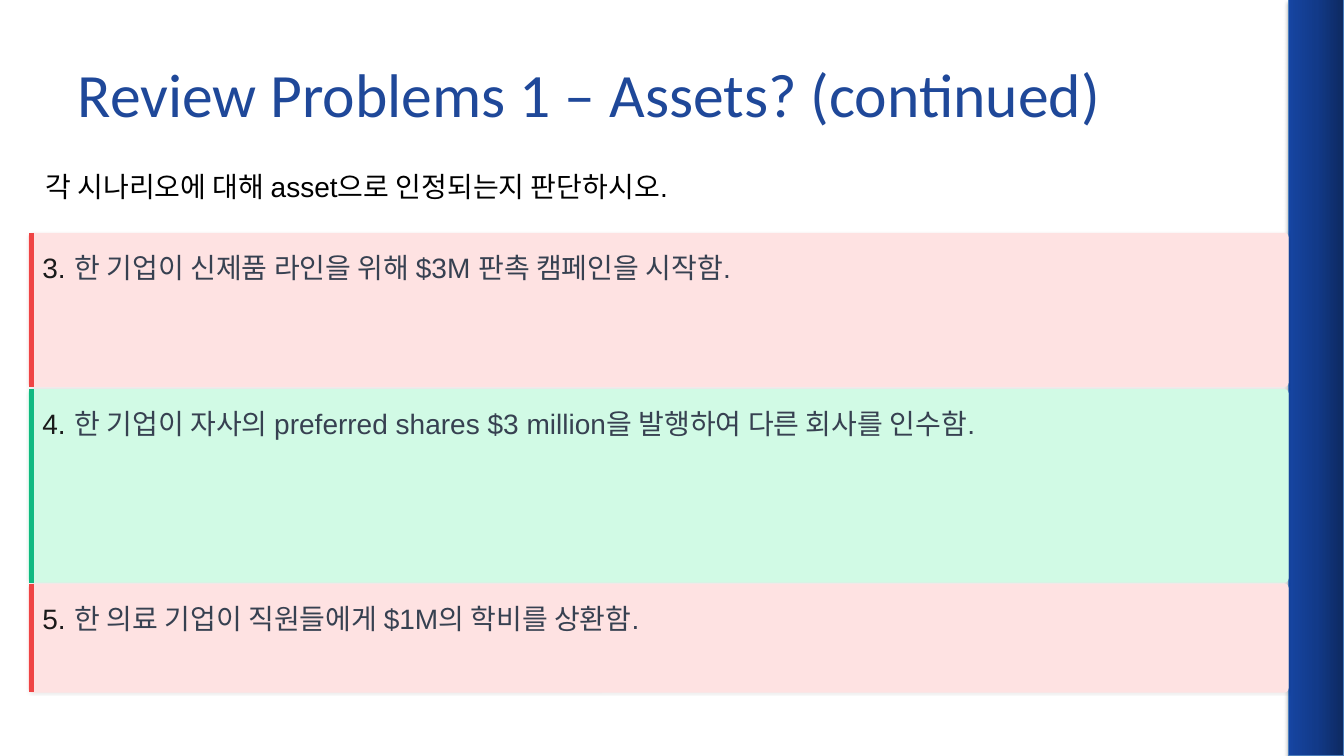
import pptx
import pptx.dml.color
import pptx.enum.shapes
import pptx.enum.text
import pptx.oxml
import pptx.oxml.ns
import pptx.util

# Content
TITLE = "Review Problems 1 – Assets? (continued)"
LEAD = "각 시나리오에 대해 asset으로 인정되는지 판단하시오."
RED = ("FEE2E2", "EF4444")
GREEN = ("D1FAE5", "10B981")
# number, text, (fill, edge), top, height
CARDS = [
    ("3.", "한 기업이 신제품 라인을 위해 $3M 판촉 캠페인을 시작함.", RED, 2.31, 1.53),
    ("4.", "한 기업이 자사의 preferred shares $3 million을 발행하여 다른 회사를 인수함.",
     GREEN, 3.86, 1.92),
    ("5.", "한 의료 기업이 직원들에게 $1M의 학비를 상환함.", RED, 5.79, 1.08),
]
RAIL = [(0, "0D2960"), (50, "123A89"), (100, "1645A2")]
LEFT, WIDTH, RADIUS = 0.28, 12.5, 0.04

Inches = pptx.util.Inches
Pt = pptx.util.Pt
KIND = pptx.enum.shapes.MSO_SHAPE
NS = pptx.oxml.ns.nsdecls("a")


def color(code):
    return pptx.dml.color.RGBColor.from_string(code)


def style(frame, text, size=20, font="Arial", tint="374151", lead=None):
    frame.word_wrap = True
    para = frame.paragraphs[0]
    para.alignment = pptx.enum.text.PP_ALIGN.LEFT
    if lead:
        para.line_spacing = Pt(lead)
        para.space_after = Pt(4)
    run = para.add_run()
    run.text = text
    run.font.size = Pt(size)
    run.font.name = font
    run.font.color.rgb = color(tint)


def label(text, x, y, w, **form):
    box = slide.shapes.add_textbox(Inches(x), Inches(y), Inches(w), Inches(0.39))
    frame = box.text_frame
    frame.margin_left = frame.margin_right = 0
    frame.margin_top = frame.margin_bottom = 0
    style(frame, text, lead=28, **form)


def block(kind, x, y, w, h):
    shape = slide.shapes.add_shape(kind, Inches(x), Inches(y), Inches(w), Inches(h))
    shape.shadow.inherit = False
    return shape


def shade(shape, alpha, blur, dist):
    glow = pptx.oxml.parse_xml(
        f'<a:outerShdw {NS} blurRad="{Pt(blur)}" dist="{Pt(dist)}" dir="5400000" '
        f'algn="t" rotWithShape="0"><a:srgbClr val="000000">'
        f'<a:alpha val="{alpha * 1000}"/></a:srgbClr></a:outerShdw>')
    shape.element.spPr.find(pptx.oxml.ns.qn("a:effectLst")).append(glow)


deck = pptx.Presentation()
deck.slide_width, deck.slide_height = Inches(13.33), Inches(7.5)
slide = deck.slides.add_slide(deck.slide_layouts[5])

# Right rail
rail = block(KIND.RECTANGLE, 12.78, 0, 0.55, 7.5)
rail.fill.gradient()
rail.fill.gradient_angle = 180
stops = rail.element.spPr.find(".//" + pptx.oxml.ns.qn("a:gsLst"))
for stop in list(stops):
    stops.remove(stop)
for place, code in RAIL:
    stops.append(pptx.oxml.parse_xml(
        f'<a:gs {NS} pos="{place * 1000}"><a:srgbClr val="{code}"/></a:gs>'))
rail.line.color.rgb = color("4B7EBC")
rail.line.width = Pt(0.75)
shade(rail, 35, 3.1, 1.8)

# Title and lead
title = slide.shapes.title
title.left, title.top = Inches(0.67), Inches(0.3)
title.width, title.height = Inches(12), Inches(1.25)
title.text_frame.vertical_anchor = pptx.enum.text.MSO_ANCHOR.MIDDLE
style(title.text_frame, TITLE, size=44, font="Calibri", tint="1F4899")
label(LEAD, 0.45, 1.63, 10.2, tint="000000")

# Scenario cards
for number, text, (fill, edge), top, high in CARDS:
    card = block(KIND.ROUNDED_RECTANGLE, LEFT, top, WIDTH, high)
    card.adjustments[0] = RADIUS / high
    card.fill.solid()
    card.fill.fore_color.rgb = color(fill)
    card.line.fill.background()
    shade(card, 8, 1.5, 0.8)

    x = Inches(LEFT + 0.03)
    bar = slide.shapes.add_connector(
        pptx.enum.shapes.MSO_CONNECTOR.STRAIGHT, x, Inches(top), x, Inches(top + high))
    bar.line.color.rgb = color(edge)
    bar.line.width = Pt(3.75)
    bar.element.spPr.append(pptx.oxml.parse_xml(f"<a:effectLst {NS}/>"))

    label(number, 0.42, top + 0.12, 0.24, tint="1A1A1A")
    label(text, 0.74, top + 0.12, 12.21)

deck.save("out.pptx")
